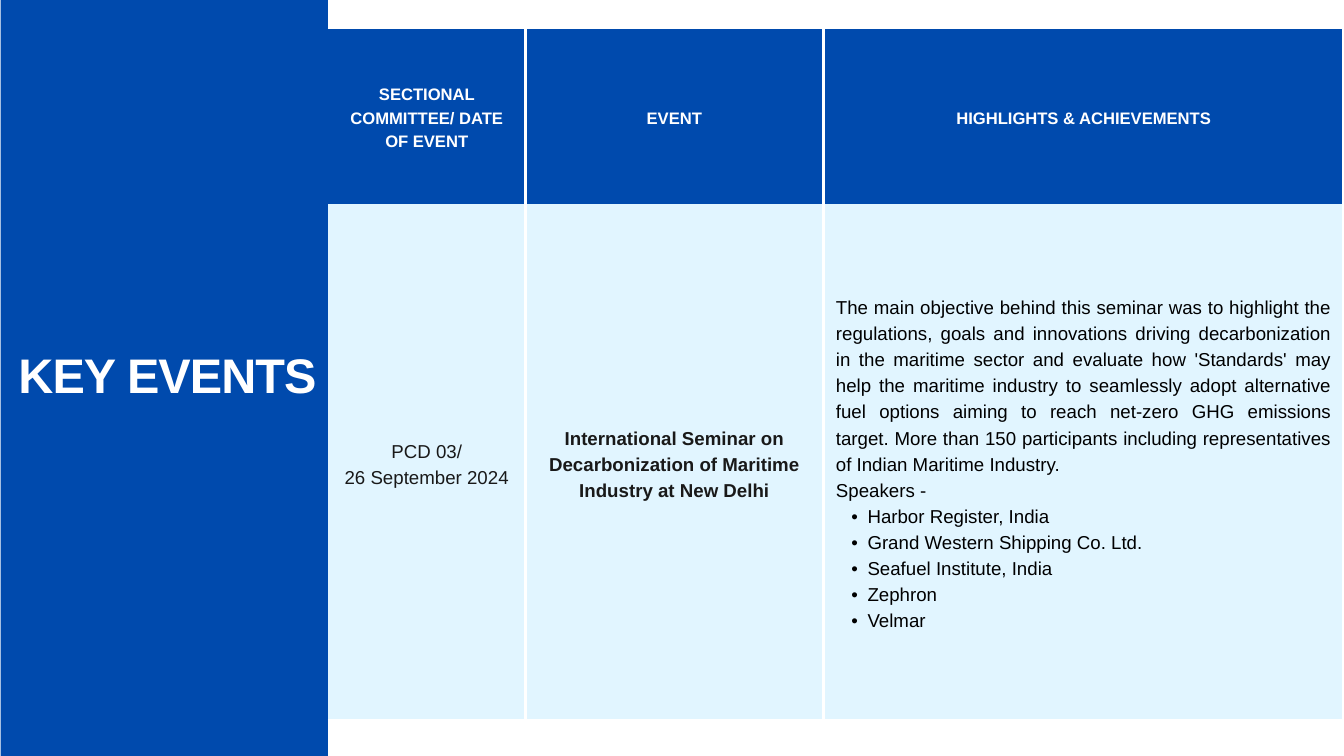
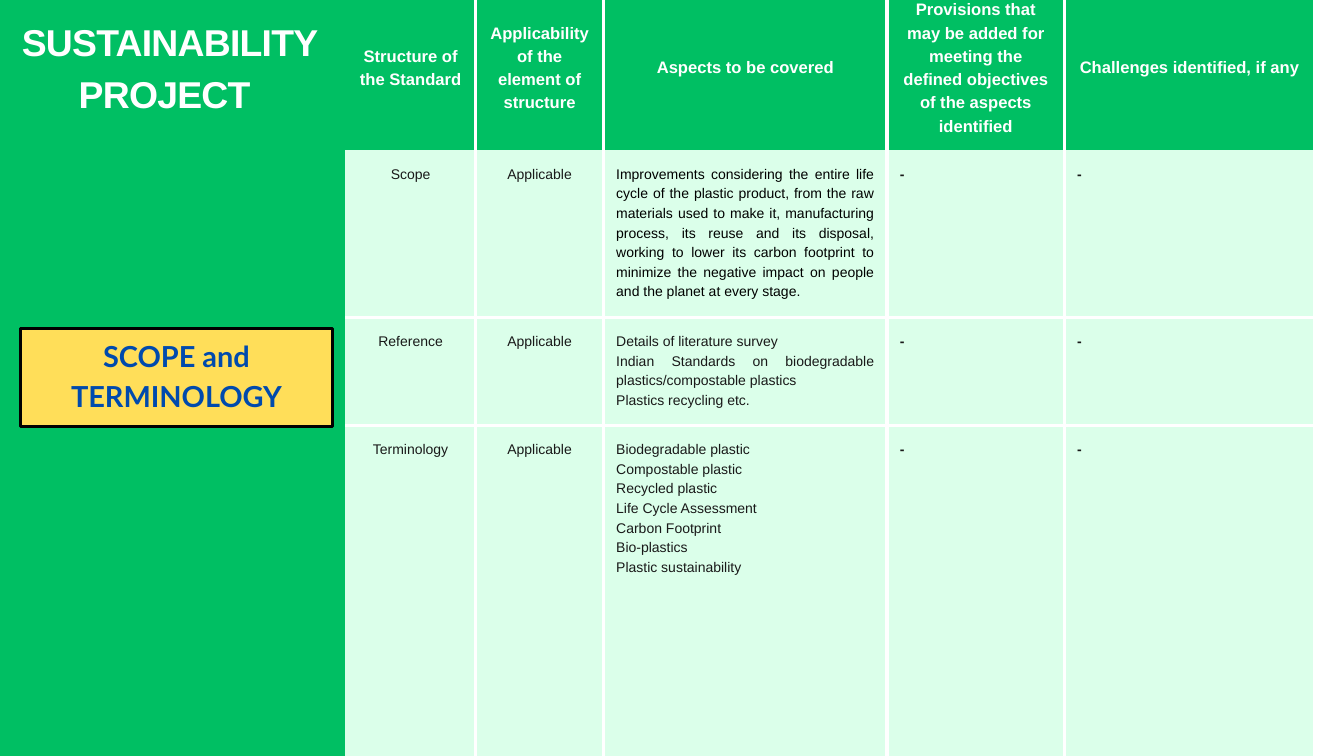
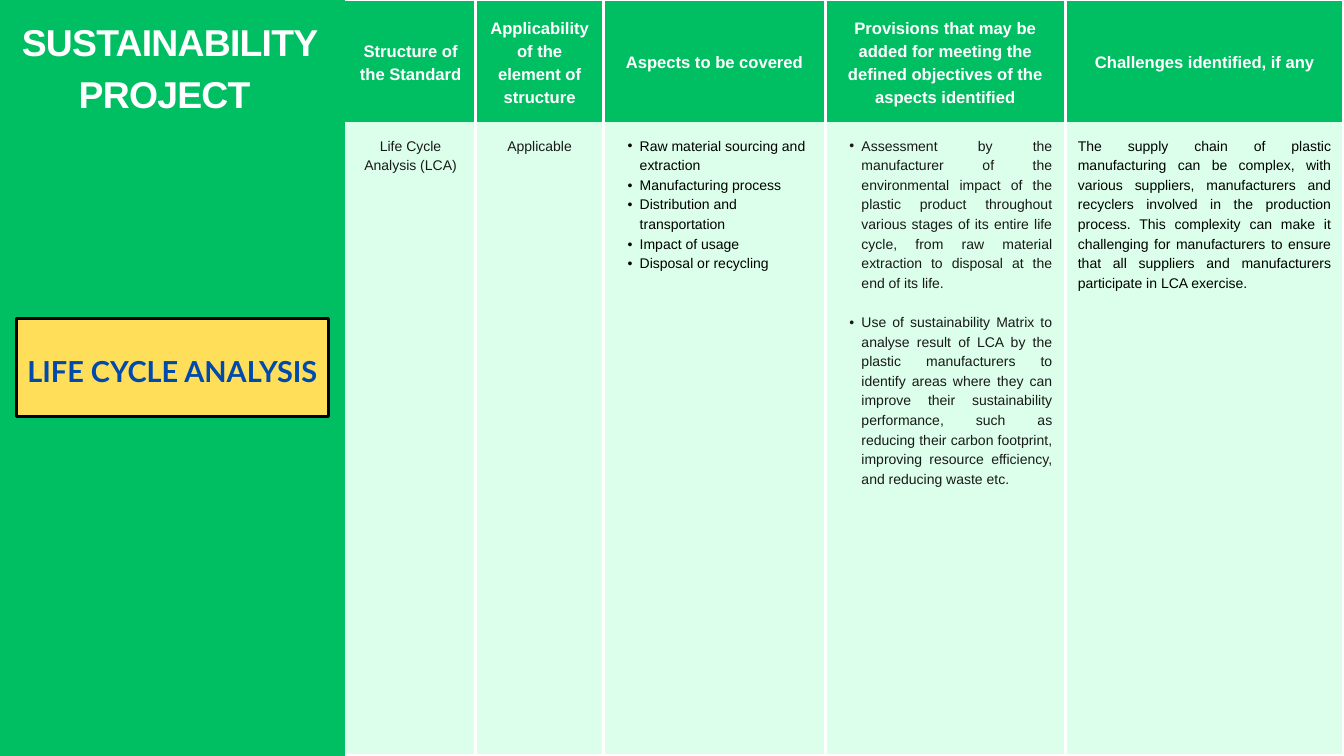
"""Build three slides: key events and two sustainability project tables."""
from lxml import etree
from pptx import Presentation
from pptx.dml.color import RGBColor
from pptx.enum.shapes import MSO_SHAPE
from pptx.enum.text import MSO_ANCHOR, MSO_AUTO_SIZE, PP_ALIGN
from pptx.oxml.ns import qn
from pptx.util import Emu, Pt

RECTANGLE = MSO_SHAPE.RECTANGLE
TOP, MIDDLE = MSO_ANCHOR.TOP, MSO_ANCHOR.MIDDLE
NO_FIT = MSO_AUTO_SIZE.NONE
LEFT, CENTER, JUSTIFY = PP_ALIGN.LEFT, PP_ALIGN.CENTER, PP_ALIGN.JUSTIFY

EMU_PER_PX = 9144
SLIDE_WIDTH, SLIDE_HEIGHT = 2000, 1125
CELL_INSET, BADGE_INSET = 19, 6
BADGE_WIDTH, BADGE_HEIGHT = 465, 146
LINE_FACTOR = 1.4
HEADER_SIZE, BADGE_SIZE = 17.8, 31
TOP_RULE, GRID_RULE = 1.48, 3.71

COLORS = {
    "blue": "004AAD", "pale blue": "E1F5FF",
    "green": "00BF63", "pale green": "DBFFEA",
    "yellow": "FFDE59", "white": "FFFFFF",
    "black": "000000", "ink": "191919",
}

CELL_STYLES = {
    "header": {"color": "white", "bold": True, "align": CENTER},
    "label": {"color": "ink", "align": CENTER},
    "strong label": {"color": "ink", "bold": True, "align": CENTER},
    "dash": {"color": "ink", "bold": True, "align": JUSTIFY},
    "note": {"color": "ink", "align": JUSTIFY},
    "text": {"color": "black", "align": JUSTIFY},
    "list": {"color": "black", "align": LEFT},
}

BULLET = "• "
DASH = ("dash", ["-"])
APPLICABLE = ("label", ["Applicable"])
PROJECT_TITLE = {
    "text": "SUSTAINABILITY PROJECT ", "box": (-10, 17, 524, 150),
    "size": 40, "tracking": -80,
}
PROJECT_THEME = {
    "title": PROJECT_TITLE, "band": (0, 514), "main": "green", "pale": "pale green",
    "body_size": 15, "body_anchor": TOP, "paragraph_gap": 0,
    "headers": [
        "Structure of the Standard",
        "Applicability of the element of structure",
        "Aspects to be covered",
        "Provisions that may be added for meeting the defined objectives of the aspects identified",
        "Challenges identified, if any",
    ],
}

SLIDES = [
    {
        "title": {"text": "KEY EVENTS ", "box": (-26, 499, 569, 160),
                  "size": 52, "tracking": -100},
        "band": (1, 487), "main": "blue", "pale": "pale blue",
        "body_size": 20, "body_anchor": MIDDLE, "paragraph_gap": 0,
        "table_at": (488, 42), "columns": [294, 443, 775], "row_heights": [261, 769],
        "headers": ["SECTIONAL COMMITTEE/ DATE OF EVENT", "EVENT",
                    "HIGHLIGHTS & ACHIEVEMENTS"],
        "rows": [[
            ("label", ["PCD 03/", "26 September 2024"]),
            ("strong label", ["International Seminar on Decarbonization of Maritime "
                              "Industry at New Delhi"]),
            ("text", [
                "The main objective behind this seminar was to highlight the regulations, "
                "goals and innovations driving decarbonization in the maritime sector and "
                "evaluate how 'Standards' may help the maritime industry to seamlessly adopt "
                "alternative fuel options aiming to reach net-zero GHG emissions target. More "
                "than 150 participants including representatives of Indian Maritime Industry.",
                "Speakers -",
                "• Harbor Register, India",
                "• Grand Western Shipping Co. Ltd.",
                "• Seafuel Institute, India",
                "• Zephron",
                "• Velmar",
            ]),
        ]],
    },
    {
        **PROJECT_THEME,
        "badge": {"text": "SCOPE and TERMINOLOGY", "at": (30, 489), "anchor": TOP},
        "table_at": (514, -27), "columns": [194, 190, 422, 264, 372],
        "row_heights": [250, 249, 161, 519],
        "rows": [
            [("label", ["Scope"]), APPLICABLE, ("text", [
                "Improvements considering the entire life cycle of the plastic product, from "
                "the raw materials used to make it, manufacturing process, its reuse and its "
                "disposal, working to lower its carbon footprint to minimize the negative "
                "impact on people and the planet at every stage.",
            ]), DASH, DASH],
            [("label", ["Reference"]), APPLICABLE, ("note", [
                "Details of literature survey",
                "Indian Standards on biodegradable plastics/compostable plastics",
                "Plastics recycling etc.",
            ]), DASH, DASH],
            [("label", ["Terminology"]), APPLICABLE, ("note", [
                "Biodegradable plastic", "Compostable plastic", "Recycled plastic",
                "Life Cycle Assessment", "Carbon Footprint", "Bio-plastics",
                "Plastic sustainability",
            ]), DASH, DASH],
        ],
    },
    {
        **PROJECT_THEME,
        "badge": {"text": "LIFE CYCLE ANALYSIS", "at": (24, 474), "anchor": MIDDLE},
        "table_at": (514, 0), "columns": [194, 190, 330, 357, 415],
        "row_heights": [181, 944], "paragraph_gap": 21,
        "rows": [[
            ("label", ["Life Cycle Analysis (LCA)"]), APPLICABLE,
            ("list", [
                "• Raw material sourcing and extraction",
                "• Manufacturing process",
                "• Distribution and transportation",
                "• Impact of usage",
                "• Disposal or recycling",
            ]),
            ("note", [
                "• Assessment by the manufacturer of the environmental impact of the plastic "
                "product throughout various stages of its entire life cycle, from raw material "
                "extraction to disposal at the end of its life.",
                "• Use of sustainability Matrix to analyse result of LCA by the plastic "
                "manufacturers to identify areas where they can improve their sustainability "
                "performance, such as reducing their carbon footprint, improving resource "
                "efficiency, and reducing waste etc.",
            ]),
            ("text", [
                "The supply chain of plastic manufacturing can be complex, with various "
                "suppliers, manufacturers and recyclers involved in the production process. "
                "This complexity can make it challenging for manufacturers to ensure that all "
                "suppliers and manufacturers participate in LCA exercise.",
            ]),
        ]],
    },
]


def px(*lengths):
    return [Emu(length * EMU_PER_PX) for length in lengths]


def rgb(name):
    return RGBColor.from_string(COLORS[name])


def set_margins(target, inset):
    (margin,) = px(inset)
    target.margin_left = target.margin_right = margin
    target.margin_top = target.margin_bottom = margin


def format_paragraph(paragraph, size, color, bold=False, align=CENTER, font="Arial"):
    paragraph.alignment = align
    paragraph.line_spacing = Pt(round(size * LINE_FACTOR, 1))
    paragraph.font.name = font
    paragraph.font.size = Pt(size)
    paragraph.font.bold = bold
    paragraph.font.color.rgb = rgb(color)


def add_bullet(paragraph, size):
    properties = paragraph._p.get_or_add_pPr()
    indent, hanging = px(round(size * 2.35), round(size * 1.2))
    properties.set("marL", str(indent))
    properties.set("indent", str(-hanging))
    etree.SubElement(properties, qn("a:buFont")).set("typeface", "Arial")
    etree.SubElement(properties, qn("a:buChar")).set("char", BULLET.strip())


def add_rectangle(slide, box, fill):
    shape = slide.shapes.add_shape(RECTANGLE, *px(*box))
    shape.shadow.inherit = False
    shape.fill.solid()
    shape.fill.fore_color.rgb = rgb(fill)
    shape.line.fill.background()
    return shape


def place_title(slide, content, band):
    title = slide.shapes.title
    band.element.addnext(title.element)
    title.left, title.top, title.width, title.height = px(*content["box"])
    frame = title.text_frame
    frame.text = content["text"]
    frame.word_wrap = True
    frame.auto_size = NO_FIT
    frame.vertical_anchor = TOP
    set_margins(frame, 0)
    format_paragraph(frame.paragraphs[0], content["size"], "white", bold=True)
    for font in title.element.iter(qn("a:defRPr")):
        font.set("spc", str(content["tracking"]))


def add_badge(slide, badge):
    shape = add_rectangle(slide, (*badge["at"], BADGE_WIDTH, BADGE_HEIGHT), "yellow")
    shape.line.color.rgb = rgb("black")
    shape.line.width = Pt(3)
    frame = shape.text_frame
    frame.text = badge["text"]
    frame.word_wrap = True
    frame.vertical_anchor = badge["anchor"]
    set_margins(frame, BADGE_INSET)
    format_paragraph(frame.paragraphs[0], BADGE_SIZE, "blue", bold=True, font="Lato")


def set_borders(cell, row, column):
    widths = {
        "a:lnL": GRID_RULE if column else 0,
        "a:lnR": GRID_RULE,
        "a:lnT": (TOP_RULE, 0)[row] if row < 2 else GRID_RULE,
        "a:lnB": GRID_RULE if row else 0,
    }
    properties = cell._tc.get_or_add_tcPr()
    for tag, width in widths.items():
        line = etree.SubElement(properties, qn(tag), w=str(Pt(width)))
        if width:
            fill = etree.SubElement(line, qn("a:solidFill"))
            etree.SubElement(fill, qn("a:srgbClr"), val=COLORS["white"])
        else:
            etree.SubElement(line, qn("a:noFill"))


def fill_cell(cell, lines, style, size, gap):
    frame = cell.text_frame
    for index, line in enumerate(lines):
        paragraph = frame.add_paragraph() if index else frame.paragraphs[0]
        paragraph.text = line.removeprefix(BULLET)
        if line.startswith(BULLET):
            add_bullet(paragraph, size)
        format_paragraph(paragraph, size, **CELL_STYLES[style])
        if index and gap and style == "note":
            paragraph.space_before = Pt(gap)


def add_content_table(slide, content):
    columns, heights = content["columns"], content["row_heights"]
    box = (*content["table_at"], sum(columns), sum(heights))
    table = slide.shapes.add_table(len(heights), len(columns), *px(*box)).table
    table.first_row = table.horz_banding = False
    for column, width in zip(table.columns, px(*columns)):
        column.width = width
    for row, height in zip(table.rows, px(*heights)):
        row.height = height
    header_row = [("header", [text]) for text in content["headers"]]
    for row, cells in enumerate([header_row, *content["rows"]]):
        size = content["body_size"] if row else HEADER_SIZE
        for column, (style, lines) in enumerate(cells):
            cell = table.cell(row, column)
            set_margins(cell, CELL_INSET)
            cell.vertical_anchor = content["body_anchor"] if row else MIDDLE
            set_borders(cell, row, column)
            cell.fill.solid()
            cell.fill.fore_color.rgb = rgb(content["pale" if row else "main"])
            fill_cell(cell, lines, style, size, content["paragraph_gap"])


def main():
    presentation = Presentation()
    presentation.slide_width, presentation.slide_height = px(SLIDE_WIDTH, SLIDE_HEIGHT)
    title_only = presentation.slide_layouts[5]
    for content in SLIDES:
        slide = presentation.slides.add_slide(title_only)
        left, width = content["band"]
        band = add_rectangle(slide, (left, 0, width, SLIDE_HEIGHT), content["main"])
        place_title(slide, content["title"], band)
        if "badge" in content:
            add_badge(slide, content["badge"])
        add_content_table(slide, content)
    presentation.save("out.pptx")


if __name__ == "__main__":
    main()
